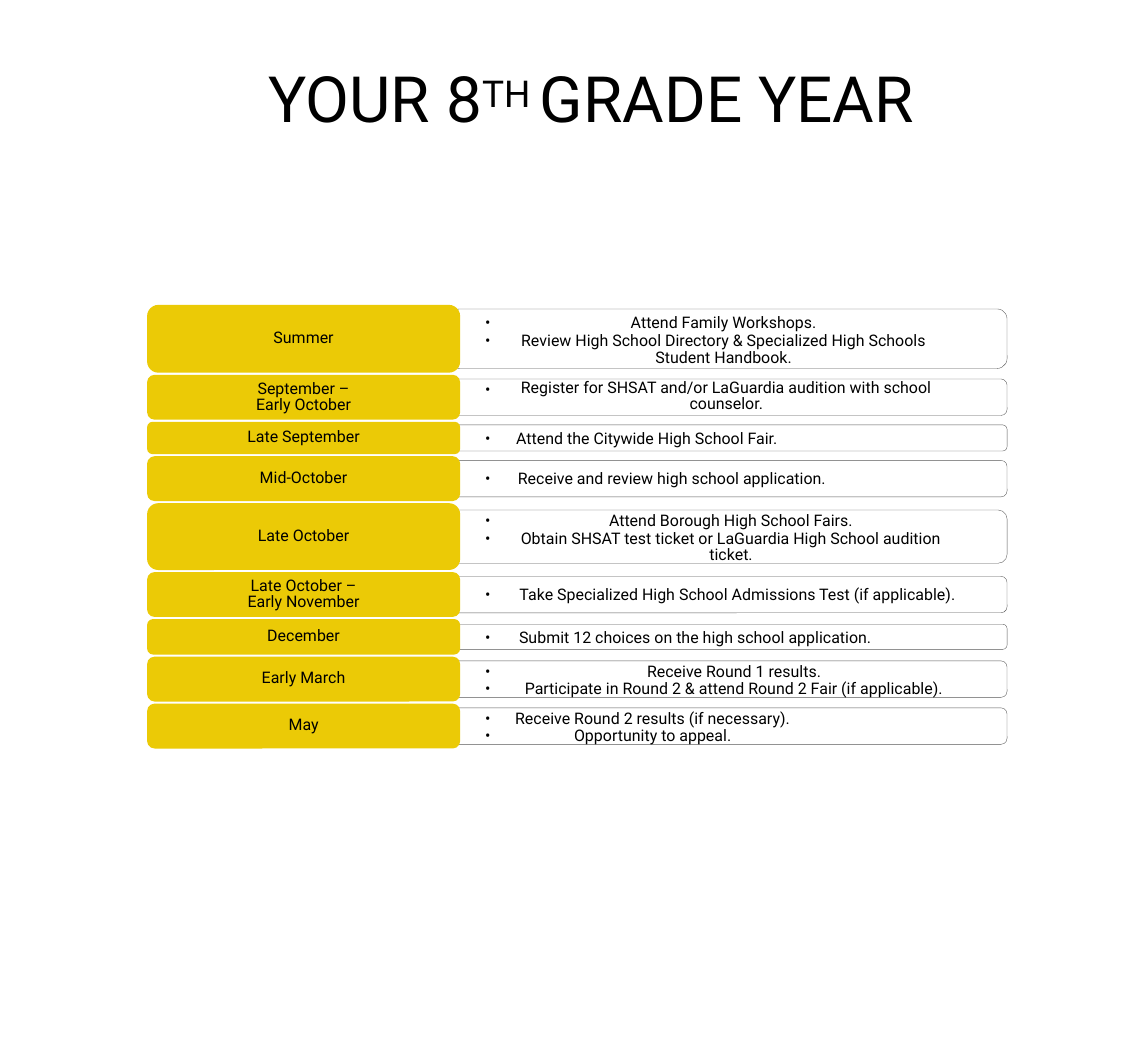
"""Build the 8th grade year timeline slide."""
from pptx import Presentation
from pptx import util as u
from pptx.dml.color import RGBColor
from pptx.enum import shapes, text

FONT, BLACK, YELLOW, GREY = "Roboto", "000000", "EBCA06", "585858"
CARD_LEFT, CARD_WIDTH = 1.41, 3
PANEL_LEFT, PANEL_WIDTH = 4.31, 5.34
BULLET_LEFT, BULLET_WIDTH = 4.59, 0.17
DUTY_LEFT = 4.8
FIRST_TOP, GAP, LINE = 2.92, 0.02, 0.16
LONGEST_LINE = 62

# card height, panel height, duty width, month, duties
rows = [
    (0.65, 0.57, 4.27, "Summer", [
        "Attend Family Workshops.",
        "Review High School Directory & Specialized High Schools Student Handbook."]),
    (0.43, 0.35, 4.32, "September – Early October", [
        "Register for SHSAT and/or LaGuardia audition with school counselor."]),
    (0.31, 0.25, 2.8, "Late September", ["Attend the Citywide High School Fair."]),
    (0.43, 0.35, 3.28, "Mid-October", ["Receive and review high school application."]),
    (0.64, 0.51, 4.41, "Late October", [
        "Attend Borough High School Fairs.",
        "Obtain SHSAT test ticket or LaGuardia High School audition ticket."]),
    (0.43, 0.35, 4.54, "Late October – Early November", [
        "Take Specialized High School Admissions Test (if applicable)."]),
    (0.34, 0.24, 3.73, "December", ["Submit 12 choices on the high school application."]),
    (0.43, 0.35, 4.47, "Early March", [
        "Receive Round 1 results.",
        "Participate in Round 2 & attend Round 2 Fair (if applicable)."]),
    (0.43, 0.35, 2.91, "May", [
        "Receive Round 2 results (if necessary).",
        "Opportunity to appeal."]),
]


def ink(color, code):
    color.rgb = RGBColor.from_string(code)


def write(box, lines, size=11, pitch=12.3, before=0.6, side=0):
    frame = box.text_frame
    frame.word_wrap = True
    frame.margin_left = frame.margin_right = u.Inches(side)
    frame.margin_top = frame.margin_bottom = 0
    frame.text = "\n".join(lines)
    for index, para in enumerate(frame.paragraphs):
        wraps = len(para.text) > LONGEST_LINE
        para.alignment = text.PP_ALIGN.CENTER
        para.line_spacing = u.Pt(11.2 if wraps else pitch)
        para.space_before = u.Pt(1.5 if wraps else 0 if index else before)
        para.font.size, para.font.name = u.Pt(size), FONT
        ink(para.font.color, BLACK)
    return frame


deck = Presentation()
deck.slide_width, deck.slide_height = u.Inches(11), u.Inches(10)
page = deck.slides.add_slide(deck.slide_layouts[6])

top = FIRST_TOP
for card_height, panel_height, duty_width, month, duties in rows:
    middle = top + card_height / 2
    panel = page.shapes.add_shape(
        shapes.MSO_SHAPE.ROUNDED_RECTANGLE, u.Inches(PANEL_LEFT),
        u.Inches(middle - panel_height / 2), u.Inches(PANEL_WIDTH), u.Inches(panel_height))
    panel.shadow.inherit = False
    panel.fill.background()
    ink(panel.line.color, GREY)
    panel.line.width = u.Pt(0.25)

    card = page.shapes.add_shape(
        shapes.MSO_SHAPE.ROUNDED_RECTANGLE, u.Inches(CARD_LEFT), u.Inches(top),
        u.Inches(CARD_WIDTH), u.Inches(card_height))
    card.shadow.inherit = False
    card.fill.solid()
    ink(card.fill.fore_color, YELLOW)
    card.line.fill.background()
    frame = write(card, [month], pitch=11.2, before=0, side=0.9)
    frame.vertical_anchor = text.MSO_ANCHOR.MIDDLE

    height = LINE * sum(2 if len(duty) > LONGEST_LINE else 1 for duty in duties)
    for left, width, lines in (
            (BULLET_LEFT, BULLET_WIDTH, ["•"] * len(duties)),
            (DUTY_LEFT, duty_width, duties)):
        box = page.shapes.add_textbox(
            u.Inches(left), u.Inches(middle - height / 2), u.Inches(width), u.Inches(height))
        write(box, lines)
    top += card_height + GAP

title = page.shapes.add_textbox(u.Inches(1.08), u.Inches(1.08), u.Inches(9.17), u.Inches(1))
para = write(title, ["YOUR 8"], size=44, pitch=15.4, before=0.8).paragraphs[0]
for words, baseline in (("TH ", 23000), ("GRADE YEAR", 0)):
    span = para.add_run()
    span.text = words
    span.font._element.set("baseline", str(baseline))

deck.save("out.pptx")
